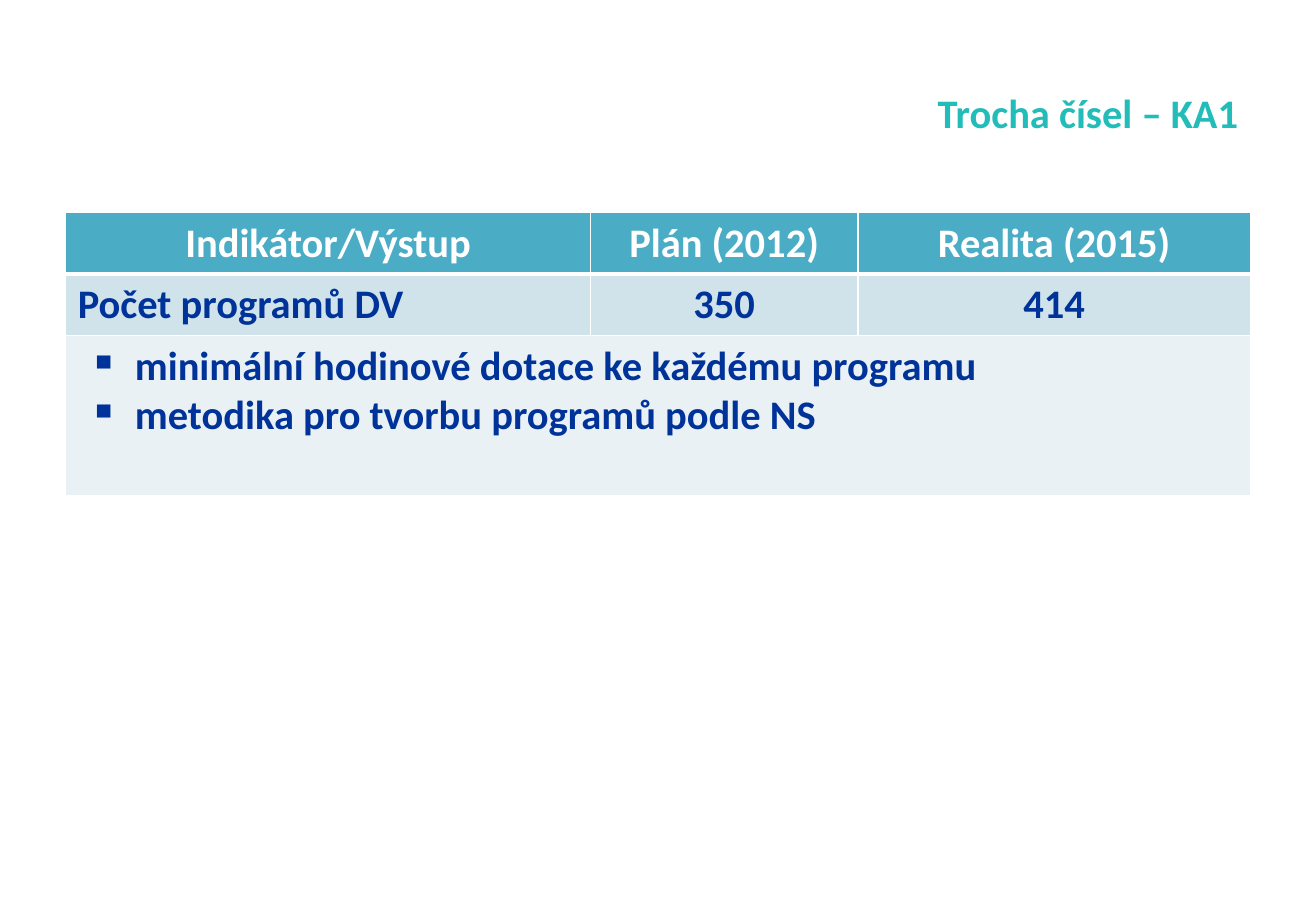
from lxml import etree
from pptx import Presentation
from pptx.dml.color import RGBColor
from pptx.enum.text import MSO_ANCHOR, PP_ALIGN
from pptx.oxml.ns import qn
from pptx.util import Inches, Pt

LEFT, CENTER, RIGHT = PP_ALIGN.LEFT, PP_ALIGN.CENTER, PP_ALIGN.RIGHT
TOP, MIDDLE = MSO_ANCHOR.TOP, MSO_ANCHOR.MIDDLE
TEAL, BLUE, WHITE = "22BCB9", "003399", "FFFFFF"
HEADER_FILL, VALUE_FILL, NOTE_FILL = "4BACC6", "D0E3EA", "E9F1F5"
TEXT_FORMAT = {"name": "Calibri", "size": Pt(24), "bold": True}
COLUMN_WIDTHS = (4.32, 2.2, 3.23)
ROW_HEIGHTS = (0.5, 0.5, 1.32)
HEADINGS = ("Indikátor/Výstup", "Plán (2012)", "Realita (2015)")
VALUES = ("Počet programů DV", "350", "414")
NOTES = (
    "minimální hodinové dotace ke každému programu",
    "metodika pro tvorbu programů podle NS",
)


def rgb(hex_color):
    """Turn a hex string into a colour."""
    return RGBColor.from_string(hex_color)


def write(paragraph, text, color, align=LEFT):
    """Put one formatted run into a paragraph."""
    paragraph.alignment = align
    run = paragraph.add_run()
    run.text = text
    for attribute, value in TEXT_FORMAT.items():
        setattr(run.font, attribute, value)
    run.font.color.rgb = rgb(color)


def add_bullet(paragraph):
    """Give a paragraph a square bullet with a hanging indent."""
    properties = paragraph._p.get_or_add_pPr()
    properties.set("marL", str(Inches(0.47)))
    properties.set("indent", str(Inches(-0.38)))
    etree.SubElement(properties, qn("a:buChar"), char="▪")


def add_border(cell, side, width):
    """Draw a white line on one side of a cell."""
    properties = cell._tc.get_or_add_tcPr()
    line = etree.SubElement(properties, qn(f"a:ln{side}"), w=str(Pt(width)))
    fill = etree.SubElement(line, qn("a:solidFill"))
    etree.SubElement(fill, qn("a:srgbClr"), val=WHITE)


def style_cell(cell, row_index, fill_color):
    """Set the borders and the fill of a cell."""
    widths = {"L": 1, "R": 1, "T": 3 if row_index == 1 else 1, "B": 3 if row_index == 0 else 1}
    for side, width in widths.items():
        add_border(cell, side, width)
    cell.fill.solid()
    cell.fill.fore_color.rgb = rgb(fill_color)


def add_title(slide, text):
    """Place the right-aligned slide title."""
    title = slide.shapes.title
    title.left, title.top = Inches(0.54), Inches(0.3)
    title.width, title.height = Inches(9.75), Inches(1.25)
    title.text_frame.vertical_anchor = MIDDLE
    write(title.text_frame.paragraphs[0], text, TEAL, RIGHT)


def add_indicator_table(slide):
    """Build the table of planned and real numbers with notes below."""
    table = slide.shapes.add_table(
        len(ROW_HEIGHTS), len(COLUMN_WIDTHS), Inches(0.54), Inches(1.75),
        Inches(sum(COLUMN_WIDTHS)), Inches(sum(ROW_HEIGHTS)),
    ).table
    for column, width in zip(table.columns, COLUMN_WIDTHS):
        column.width = Inches(width)
    for row_index, fill_color in enumerate((HEADER_FILL, VALUE_FILL, NOTE_FILL)):
        table.rows[row_index].height = Inches(ROW_HEIGHTS[row_index])
        for cell in table.rows[row_index].cells:
            style_cell(cell, row_index, fill_color)

    for index, (heading, value) in enumerate(zip(HEADINGS, VALUES)):
        write(table.cell(0, index).text_frame.paragraphs[0], heading, WHITE, CENTER)
        value_cell = table.cell(1, index)
        value_cell.vertical_anchor = MIDDLE if index else TOP
        write(value_cell.text_frame.paragraphs[0], value, BLUE, CENTER if index else LEFT)

    note_cell = table.cell(2, 0)
    note_cell.merge(table.cell(2, len(COLUMN_WIDTHS) - 1))
    note_frame = note_cell.text_frame
    for index, note in enumerate(NOTES):
        paragraph = note_frame.add_paragraph() if index else note_frame.paragraphs[0]
        add_bullet(paragraph)
        write(paragraph, note, BLUE)


def main():
    """Create the slide and save it."""
    presentation = Presentation()
    presentation.slide_width, presentation.slide_height = Inches(10.83), Inches(7.5)
    slide = presentation.slides.add_slide(presentation.slide_layouts[5])
    add_title(slide, "Trocha čísel – KA1")
    add_indicator_table(slide)
    presentation.save("out.pptx")


if __name__ == "__main__":
    main()
